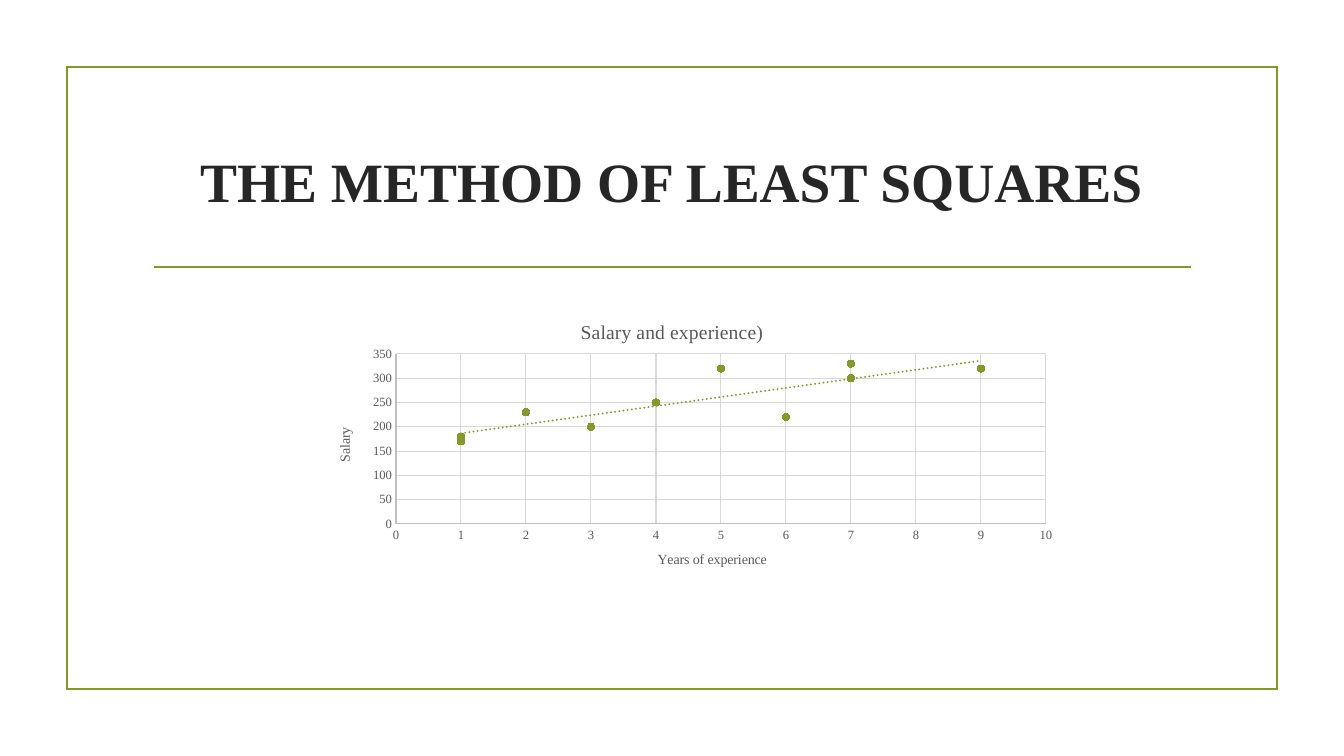
from dataclasses import dataclass
from typing import Any

import lxml.etree
import pptx
import pptx.chart.data
import pptx.dml.color
import pptx.enum.chart
import pptx.enum.shapes
import pptx.enum.text
import pptx.oxml
import pptx.oxml.ns
import pptx.util

SCALE = 914400 / 100.8


@dataclass(frozen=True)
class Theme:
    font: str = "Times New Roman"
    green: str = "83992A"
    dark: str = "262626"
    gray: str = "595959"
    axis: str = "BFBFBF"
    grid: str = "D9D9D9"
    head: float = 39.6
    title: float = 14
    label: float = 10
    tick: float = 9
    rule: float = 1.25
    trend: float = 1.5
    thin: float = 0.75


@dataclass(frozen=True)
class Scale:
    title: str
    top: int
    step: int
    left: int
    high: int
    turn: int


THEME = Theme()
WIDE, TALL = 794, 274
YEARS = Scale("Years of experience", 10, 1, 380, 242, 0)
SALARY = Scale("Salary", 350, 50, 58, 119, -5400000)
STAFF = [(2, 230), (3, 200), (1, 170), (5, 320), (1, 180),
         (7, 330), (4, 250), (7, 300), (6, 220), (9, 320)]


def px(size: int) -> pptx.util.Emu:
    return pptx.util.Emu(round(size * SCALE))


def box(*sizes: int) -> list[pptx.util.Emu]:
    return [px(size) for size in sizes]


def rgb(code: str) -> pptx.dml.color.RGBColor:
    return pptx.dml.color.RGBColor.from_string(code)


def style(font: Any, size: float, color: str, bold: bool = False) -> None:
    font.name = THEME.font
    font.size = pptx.util.Pt(size)
    font.bold = bold
    font.color.rgb = rgb(color)


def stroke(line: Any, color: str, width: float) -> None:
    line.color.rgb = rgb(color)
    line.width = pptx.util.Pt(width)


def place(node: Any, index: int, inner: bool = False, **parts: int) -> None:
    for old in node.findall(pptx.oxml.ns.qn("c:layout")):
        node.remove(old)
    target = '<c:layoutTarget val="inner"/>' if inner else ""
    modes = "".join(f'<c:{key}Mode val="edge"/>' for key in "xy")
    sizes = "".join(
        f'<c:{key} val="{part / (WIDE if key in "xw" else TALL):.4f}"/>'
        for key, part in parts.items())
    node.insert(index, pptx.oxml.parse_xml(
        f'<c:layout {pptx.oxml.ns.nsdecls("c")}><c:manualLayout>'
        f'{target}{modes}{sizes}</c:manualLayout></c:layout>'))


def caption(title: Any, text: str, size: float, left: int, high: int,
            turn: int = 0) -> None:
    frame = title.text_frame
    frame.text = text
    style(frame.paragraphs[0].runs[0].font, size, THEME.gray)
    frame._txBody.bodyPr.set("rot", str(turn))
    place(title._element, 1, x=left, y=high)


def set_axis(axis: Any, scale: Scale) -> None:
    axis.minimum_scale = 0
    axis.maximum_scale = scale.top
    axis.major_unit = scale.step
    axis.major_tick_mark = pptx.enum.chart.XL_TICK_MARK.NONE
    axis.minor_tick_mark = pptx.enum.chart.XL_TICK_MARK.NONE
    axis.has_major_gridlines = True
    stroke(axis.major_gridlines.format.line, THEME.grid, THEME.thin)
    stroke(axis.format.line, THEME.axis, THEME.thin)
    style(axis.tick_labels.font, THEME.tick, THEME.gray)
    axis.has_title = True
    caption(axis.axis_title, scale.title, THEME.label,
            scale.left, scale.high, scale.turn)


def add_trend(series: Any) -> None:
    width = pptx.util.Pt(THEME.trend)
    trend = pptx.oxml.parse_xml(
        f'<c:trendline {pptx.oxml.ns.nsdecls("c", "a")}>'
        f'<c:spPr><a:ln w="{width}" cap="rnd"><a:solidFill>'
        f'<a:srgbClr val="{THEME.green}"/></a:solidFill>'
        '<a:prstDash val="sysDot"/></a:ln></c:spPr>'
        '<c:trendlineType val="linear"/><c:dispRSqr val="0"/>'
        '<c:dispEq val="0"/></c:trendline>')
    series._element.find(pptx.oxml.ns.qn("c:xVal")).addprevious(trend)


def add_frame(slide: Any) -> None:
    frame = slide.shapes.add_shape(
        pptx.enum.shapes.MSO_SHAPE.RECTANGLE, *box(67, 67, 1210, 622))
    frame.shadow.inherit = False
    frame.fill.background()
    stroke(frame.line, THEME.green, THEME.rule)
    edge = frame._element.spPr.find(pptx.oxml.ns.qn("a:ln"))
    miter = lxml.etree.SubElement(edge, pptx.oxml.ns.qn("a:miter"))
    miter.set("lim", "800000")
    rule = slide.shapes.add_connector(
        pptx.enum.shapes.MSO_CONNECTOR.STRAIGHT, *box(154, 267, 1191, 267))
    stroke(rule.line, THEME.green, THEME.rule)
    lxml.etree.SubElement(rule._element.spPr, pptx.oxml.ns.qn("a:effectLst"))


def add_head(slide: Any) -> None:
    frame = slide.shapes.add_textbox(*box(143, 108, 1057, 144)).text_frame
    frame.word_wrap = True
    frame.vertical_anchor = pptx.enum.text.MSO_ANCHOR.MIDDLE
    frame.text = "THE METHOD OF LEAST SQUARES"
    line = frame.paragraphs[0]
    line.alignment = pptx.enum.text.PP_ALIGN.CENTER
    style(line.runs[0].font, THEME.head, THEME.dark, bold=True)


def add_plot(slide: Any) -> None:
    data = pptx.chart.data.XyChartData()
    points = data.add_series("Series 1")
    for years, salary in STAFF:
        points.add_data_point(years, salary)
    chart = slide.shapes.add_chart(
        pptx.enum.chart.XL_CHART_TYPE.XY_SCATTER,
        *box(275, 306, WIDE, TALL), data).chart
    style(chart.font, THEME.label, THEME.gray)
    chart.has_legend = False
    chart.has_title = True
    caption(chart.chart_title, "Salary and experience)", THEME.title, 302, 10)
    set_axis(chart.category_axis, YEARS)
    set_axis(chart.value_axis, SALARY)
    plot = chart.plots[0]
    plot.vary_by_categories = False
    series = plot.series[0]
    series.format.line.fill.background()
    marker = series.marker
    marker.style = pptx.enum.chart.XL_MARKER_STYLE.CIRCLE
    marker.size = 5
    marker.format.fill.solid()
    marker.format.fill.fore_color.rgb = rgb(THEME.green)
    stroke(marker.format.line, THEME.green, THEME.thin)
    add_trend(series)
    area = chart._chartSpace.chart.plotArea
    place(area, 0, inner=True, x=121, y=48, w=650, h=170)


def main() -> None:
    deck = pptx.Presentation()
    deck.slide_width, deck.slide_height = box(1344, 756)
    slide = deck.slides.add_slide(deck.slide_layouts[6])
    add_frame(slide)
    add_head(slide)
    add_plot(slide)
    deck.save("out.pptx")


if __name__ == "__main__":
    main()
